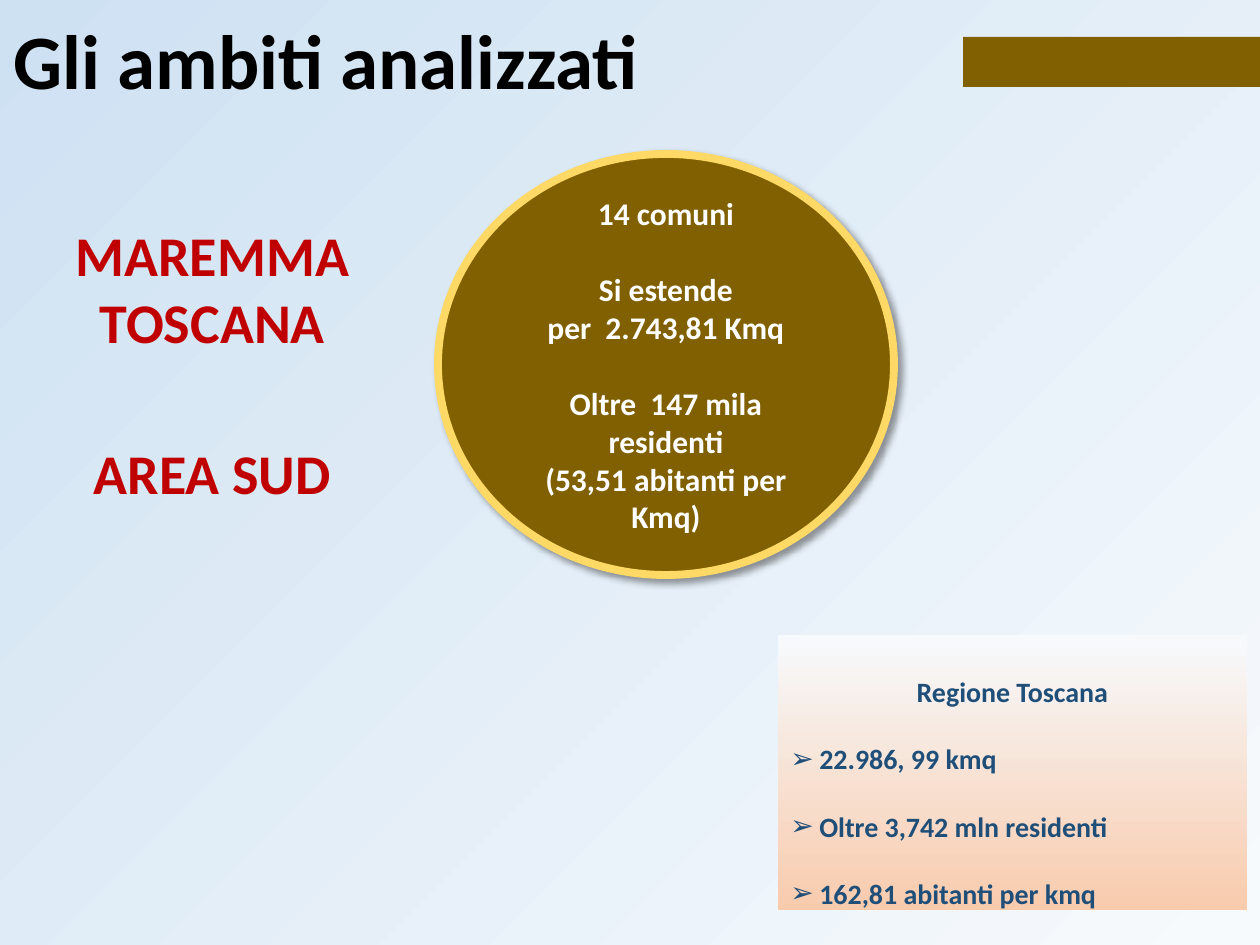
from lxml import etree
from pptx import Presentation
from pptx import util as u
from pptx.dml.color import RGBColor
from pptx.enum import shapes, text
from pptx.oxml.ns import qn

EMU_PER_PX = 914400 / 126
CENTER, LEFT = text.PP_ALIGN.CENTER, text.PP_ALIGN.LEFT
TOP, MIDDLE = text.MSO_ANCHOR.TOP, text.MSO_ANCHOR.MIDDLE
OCHRE, GOLD, RED, NAVY = "806000", "FFD966", "C00000", "1F4E79"
MIST, SKY, PEACH = "F7FAFD", "CEE1F2", "F8CBAD"


def px(length):
    return u.Emu(round(length * EMU_PER_PX))


def color(code):
    return RGBColor.from_string(code)


def paint_gradient(fill, first, last, angle):
    fill.gradient()
    fill.gradient_angle = angle
    for stop, code, position in zip(fill.gradient_stops, (first, last), (0, 1)):
        stop.color.rgb = color(code)
        stop.position = position


def add_bullet(paragraph, indent):
    props = paragraph._p.get_or_add_pPr()
    props.set("marL", str(px(indent)))
    props.set("indent", str(-px(indent)))
    etree.SubElement(props, qn("a:buFont"), typeface="Arial")
    etree.SubElement(props, qn("a:buChar"), char="➢")


def write(frame, lines, size, ink, align=CENTER, anchor=TOP, spacing=None,
          gap=0, gap_before=(), bulleted=()):
    frame.word_wrap = True
    frame.vertical_anchor = anchor
    for index, line in enumerate(lines):
        paragraph = frame.paragraphs[0] if index == 0 else frame.add_paragraph()
        paragraph.alignment = LEFT if index in bulleted else align
        if spacing:
            paragraph.line_spacing = spacing
        if index in gap_before:
            paragraph.space_before = u.Pt(gap)
        if index in bulleted:
            add_bullet(paragraph, 29)
        run = paragraph.add_run()
        run.text = line
        run.font.name = "Calibri"
        run.font.size = u.Pt(size)
        run.font.bold = True
        run.font.color.rgb = color(ink)


class Deck:
    def __init__(self, width, height):
        self.file = Presentation()
        self.file.slide_width, self.file.slide_height = px(width), px(height)
        self.slide = self.file.slides.add_slide(self.file.slide_layouts[6])

    def background(self, first, last, angle):
        paint_gradient(self.slide.background.fill, first, last, angle)

    def shape(self, kind, box, fill=None):
        item = self.slide.shapes.add_shape(kind, *map(px, box))
        item.shadow.inherit = False
        item.line.fill.background()
        if fill:
            item.fill.solid()
            item.fill.fore_color.rgb = color(fill)
        return item

    def rectangle(self, box, fill):
        return self.shape(shapes.MSO_SHAPE.RECTANGLE, box, fill)

    def gradient_panel(self, box, first, last, angle):
        panel = self.shape(shapes.MSO_SHAPE.RECTANGLE, box)
        paint_gradient(panel.fill, first, last, angle)
        return panel.text_frame

    def badge(self, box, fill, border, border_width):
        oval = self.shape(shapes.MSO_SHAPE.OVAL, box, fill)
        oval.line.color.rgb = color(border)
        oval.line.width = u.Pt(border_width)
        effects = oval._element.spPr.find(qn("a:effectLst"))
        shadow = etree.SubElement(
            effects, qn("a:outerShdw"), blurRad=str(u.Pt(4)), dist=str(u.Pt(3)),
            dir="2700000", algn="tl", rotWithShape="0")
        black = etree.SubElement(shadow, qn("a:srgbClr"), val="000000")
        etree.SubElement(black, qn("a:alpha"), val="40000")
        frame = oval.text_frame
        frame.margin_left = frame.margin_right = px(9)
        frame.margin_top = frame.margin_bottom = px(5)
        return frame

    def textbox(self, box):
        return self.slide.shapes.add_textbox(*map(px, box)).text_frame


def main():
    deck = Deck(1260, 945)
    deck.background(MIST, SKY, 135)

    area_facts = deck.badge((438, 154, 456, 421), OCHRE, GOLD, 4.5)
    write(area_facts,
          ["14 comuni", "Si estende", "per  2.743,81 Kmq",
           "Oltre  147 mila residenti", "(53,51 abitanti per Kmq)"],
          18, "FFFFFF", anchor=MIDDLE, gap=22, gap_before=(1, 3))

    deck.rectangle((963, 37, 297, 50), OCHRE)

    title = deck.textbox((1, 10, 892, 110))
    write(title, ["Gli ambiti analizzati"], 44, "000000", align=LEFT,
          anchor=MIDDLE, spacing=0.9)

    region_facts = deck.gradient_panel((778, 635, 469, 275), MIST, PEACH, 270)
    write(region_facts,
          ["Regione Toscana", "22.986, 99 kmq", "Oltre 3,742 mln residenti",
           "162,81 abitanti per kmq"],
          16, NAVY, spacing=2.0, bulleted=(1, 2, 3))

    area_name = deck.textbox((1, 214, 423, 302))
    write(area_name, ["MAREMMA TOSCANA", "AREA SUD"], 32, RED,
          gap=48, gap_before=(1,))

    deck.file.save("out.pptx")


if __name__ == "__main__":
    main()
